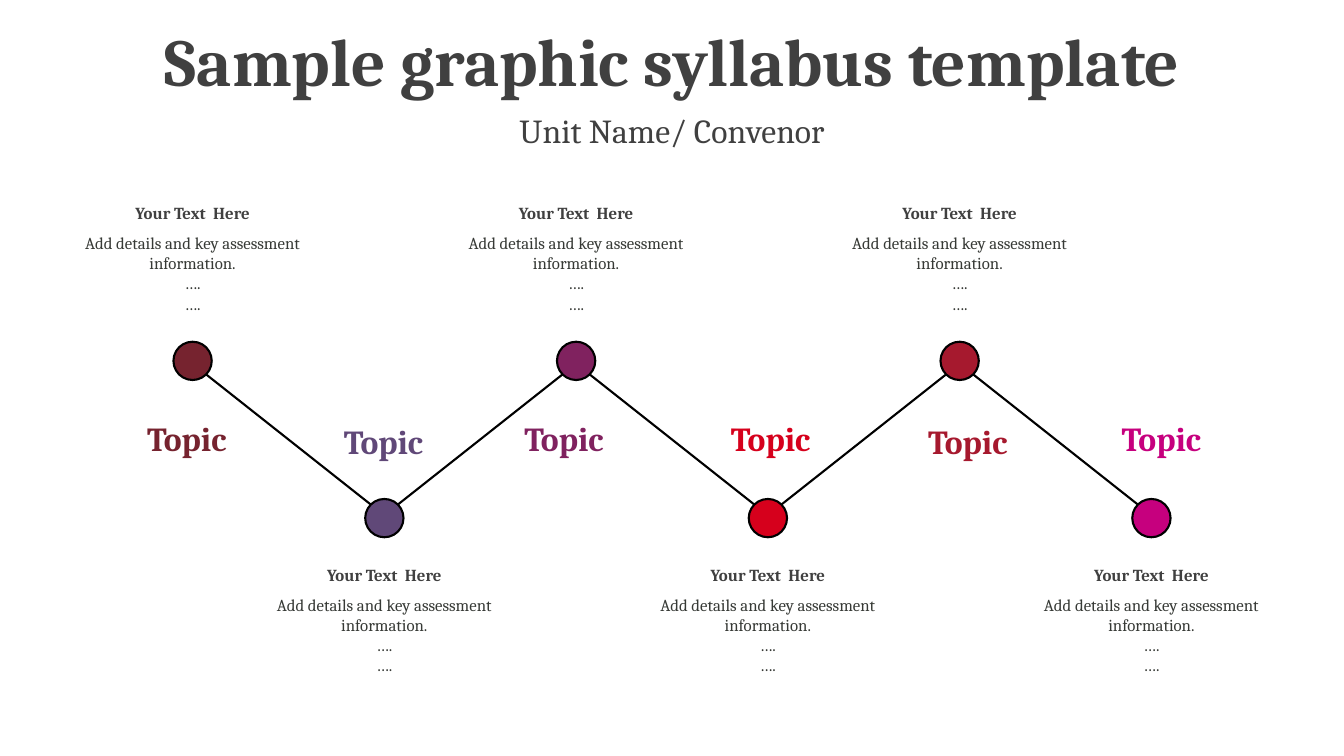
import math
import pptx
import pptx.util
import pptx.dml.color
import pptx.enum.shapes
import pptx.enum.text
import lxml.etree

Inches = pptx.util.Inches
Pt = pptx.util.Pt
RGBColor = pptx.dml.color.RGBColor

BLACK = RGBColor(0x00, 0x00, 0x00)
HEADING = RGBColor(0x40, 0x40, 0x40)
DETAIL = RGBColor(0x37, 0x3A, 0x36)
MAROON = RGBColor(0x76, 0x23, 0x2F)
VIOLET = RGBColor(0x60, 0x48, 0x78)
PLUM = RGBColor(0x80, 0x22, 0x5F)
RED = RGBColor(0xD6, 0x00, 0x1C)
CRIMSON = RGBColor(0xA6, 0x19, 0x2E)
MAGENTA = RGBColor(0xC6, 0x00, 0x7E)

deck = pptx.Presentation()
deck.slide_width = Inches(13.33)
deck.slide_height = Inches(7.5)
page = deck.slides.add_slide(deck.slide_layouts[6])


def add_text(left, top, width, height, lines, size, color, bold=False):
    box = page.shapes.add_textbox(Inches(left), Inches(top), Inches(width), Inches(height))
    frame = box.text_frame
    frame.word_wrap = True
    frame.text = "\n".join(lines)
    for para in frame.paragraphs:
        para.alignment = pptx.enum.text.PP_ALIGN.CENTER
        para.font.name = "Cambria"
        para.font.size = Pt(size)
        para.font.bold = bold
        para.font.color.rgb = color
    return frame


title = add_text(0, 0.22, 13.33, 0.85, ["Sample graphic syllabus template"], 48, HEADING, True)
title.paragraphs[0].line_spacing = 0.9
subtitle = add_text(0, 1.1, 13.33, 0.46, ["Unit Name/ Convenor"], 24, HEADING)
subtitle.paragraphs[0].line_spacing = 0.8
subtitle.paragraphs[0].space_before = Pt(10)
for frame in (title, subtitle):
    frame.vertical_anchor = pptx.enum.text.MSO_ANCHOR.MIDDLE

# color, topic left, topic top, topic width
topics = [
    (MAROON, 1.26, 4.1, 1.26),
    (VIOLET, 3.26, 4.13, 1.16),
    (PLUM, 5.05, 4.1, 1.16),
    (RED, 7.1, 4.1, 1.16),
    (CRIMSON, 8.98, 4.13, 1.31),
    (MAGENTA, 10.91, 4.1, 1.29),
]
DIAMETER = 0.38
DETAIL_WIDTH = 2.49
FIRST_X, LAST_X = 1.91, 11.42
step = (LAST_X - FIRST_X) / (len(topics) - 1)
centers = [(FIRST_X + index * step, 5.14 if index % 2 else 3.58) for index in range(len(topics))]

for (center_x, center_y), (color, topic_left, topic_top, topic_width) in zip(centers, topics):
    node = page.shapes.add_shape(
        pptx.enum.shapes.MSO_SHAPE.OVAL,
        Inches(center_x - DIAMETER / 2), Inches(center_y - DIAMETER / 2),
        Inches(DIAMETER), Inches(DIAMETER))
    node.shadow.inherit = False
    node.fill.solid()
    node.fill.fore_color.rgb = color
    node.line.color.rgb = BLACK
    node.line.width = Pt(1.5)

    heading_top = 1.96 if center_y == 3.58 else 5.55
    detail_left = center_x - DETAIL_WIDTH / 2
    add_text(detail_left, heading_top, DETAIL_WIDTH, 0.3, ["Your Text  Here"], 12, HEADING, True)
    add_text(detail_left, heading_top + 0.3, DETAIL_WIDTH, 0.91,
             ["Add details and key assessment information.", "….", "…."], 12, DETAIL)
    add_text(topic_left, topic_top, topic_width, 0.5, ["Topic "], 24, color, True)

reach = DIAMETER / 2 * math.sqrt(0.5)
for (start_x, start_y), (end_x, end_y) in zip(centers, centers[1:]):
    drop = math.copysign(reach, end_y - start_y)
    link = page.shapes.add_connector(
        pptx.enum.shapes.MSO_CONNECTOR.STRAIGHT,
        Inches(start_x + reach), Inches(start_y + drop),
        Inches(end_x - reach), Inches(end_y - drop))
    link.line.color.rgb = BLACK
    link.line.width = Pt(1.5)
    properties = link.element.spPr
    lxml.etree.SubElement(properties, "{http://schemas.openxmlformats.org/drawingml/2006/main}effectLst")

deck.save("out.pptx")
